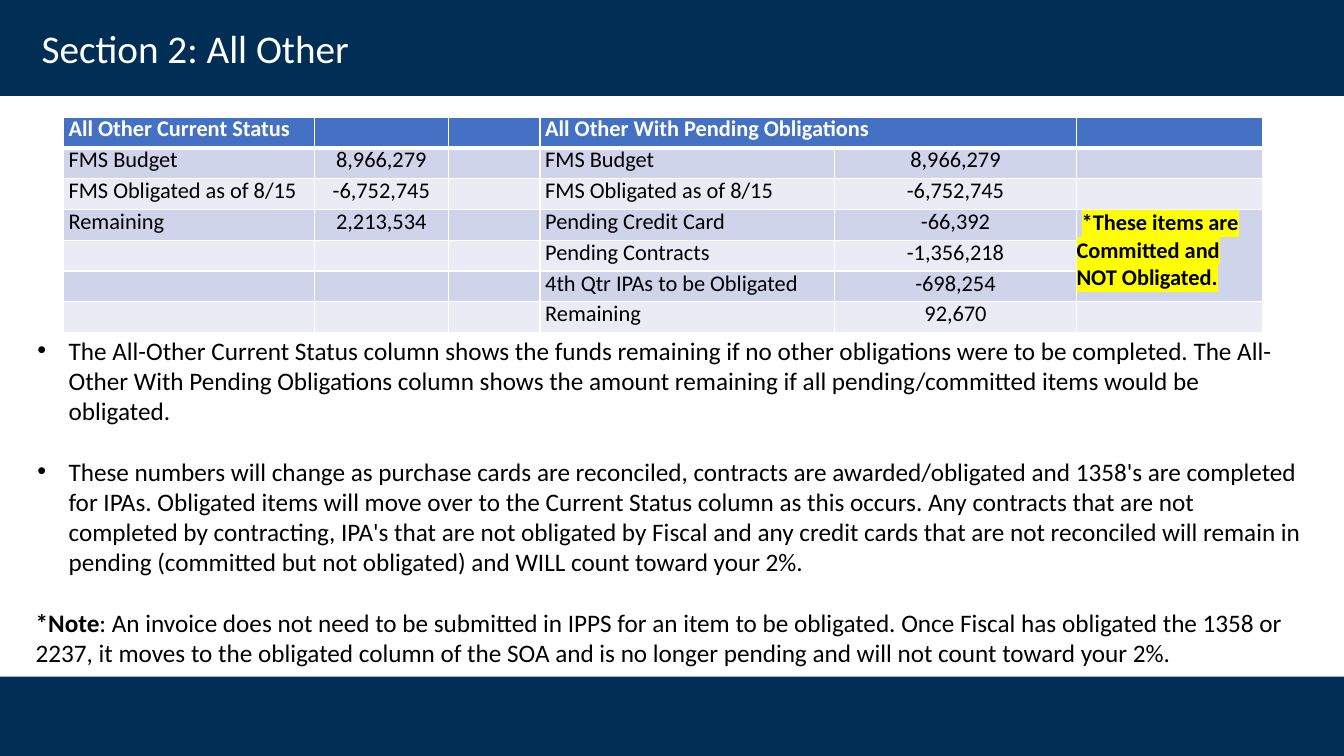
"""Build the "Section 2: All Other" budget status slide."""
from dataclasses import dataclass
from typing import Any

from lxml import etree
from pptx import Presentation
from pptx.dml.color import RGBColor
from pptx.enum.shapes import MSO_SHAPE
from pptx.enum.text import PP_ALIGN
from pptx.oxml.ns import qn
from pptx.util import Cm, Pt

RECTANGLE = MSO_SHAPE.RECTANGLE
LEFT, CENTER = PP_ALIGN.LEFT, PP_ALIGN.CENTER
NAVY = RGBColor(0x00, 0x2E, 0x55)
HEADER_BLUE = RGBColor(0x44, 0x71, 0xC4)
BAND_DARK = RGBColor(0xCF, 0xD4, 0xEA)
BAND_LIGHT = RGBColor(0xE9, 0xEB, 0xF5)
YELLOW = RGBColor(0xFF, 0xFF, 0x00)
WHITE = RGBColor(0xFF, 0xFF, 0xFF)
BLACK = RGBColor(0x00, 0x00, 0x00)

SLIDE_WIDTH, SLIDE_HEIGHT = 33.87, 19.05
COLUMN_WIDTHS = (6.32, 3.38, 2.31, 7.42, 6.1, 4.7)
ROW_HEIGHTS = (0.69, 0.71, 0.71, 0.71, 0.71, 0.71, 0.74)
NUMBER_COLUMNS = (1, 4)
NOTE_ROW, NOTE_COLUMN = 3, 5
STATUS_ROWS = (
    ("All Other Current Status", "", "", "All Other With Pending Obligations", "", ""),
    ("FMS Budget", "8,966,279", "", "FMS Budget", "8,966,279", ""),
    ("FMS Obligated as of 8/15", "-6,752,745", "", "FMS Obligated as of 8/15", "-6,752,745", ""),
    ("Remaining", "2,213,534", "", "Pending Credit Card", "-66,392",
     "*These items are Committed and NOT Obligated."),
    ("", "", "", "Pending Contracts", "-1,356,218", ""),
    ("", "", "", "4th Qtr IPAs to be Obligated", "-698,254", ""),
    ("", "", "", "Remaining", "92,670", ""),
)


@dataclass(frozen=True)
class Band:
    top: float
    height: float


@dataclass(frozen=True)
class Box:
    left: float
    top: float
    width: float
    height: float
    top_margin: float


@dataclass(frozen=True)
class Passage:
    text: str
    lead: str = ""
    bullet: bool = False
    space_before: float = 0


BANDS = (Band(0, 2.42), Band(17.05, 2))
TITLE_BOX = Box(0.41, 0.43, 32.3, 1.6, 0.19)
BODY_BOX = Box(0.9, 8.38, 32, 8.46, 0.06)
PASSAGES = (
    Passage("The All-Other Current Status column shows the funds remaining if no other "
            "obligations were to be completed. The All-Other With Pending Obligations column "
            "shows the amount remaining if all pending/committed items would be obligated.",
            bullet=True),
    Passage("These numbers will change as purchase cards are reconciled, contracts are "
            "awarded/obligated and 1358's are completed for IPAs. Obligated items will move over "
            "to the Current Status column as this occurs. Any contracts that are not completed by "
            "contracting, IPA's that are not obligated by Fiscal and any credit cards that are not "
            "reconciled will remain in pending (committed but not obligated) and WILL count toward "
            "your 2%.", bullet=True, space_before=21.6),
    Passage(": An invoice does not need to be submitted in IPPS for an item to be obligated. Once "
            "Fiscal has obligated the 1358 or 2237, it moves to the obligated column of the SOA "
            "and is no longer pending and will not count toward your 2%.",
            lead="*Note", space_before=21.6),
)


def apply_formats(target: Any, formats: dict[str, Any]) -> None:
    for name, value in formats.items():
        setattr(target, name, value)


def add_run(paragraph: Any, text: str, size: float, color: RGBColor, bold: bool = False) -> Any:
    run = paragraph.add_run()
    run.text = text
    apply_formats(run.font, {"name": "Calibri", "size": Pt(size), "bold": bold})
    run.font.color.rgb = color
    return run


def set_indent(paragraph: Any, margin: float, first_line: float = 0) -> Any:
    properties = paragraph._p.get_or_add_pPr()
    properties.set("marL", str(Cm(margin)))
    properties.set("indent", str(Cm(first_line)))
    return properties


def highlight(run: Any, color: RGBColor) -> None:
    mark = etree.Element(qn("a:highlight"))
    etree.SubElement(mark, qn("a:srgbClr"), val=str(color))
    run.font._element.find(qn("a:solidFill")).addnext(mark)


def add_band(slide: Any, band: Band) -> None:
    shape = slide.shapes.add_shape(
        RECTANGLE, Cm(0), Cm(band.top), Cm(SLIDE_WIDTH), Cm(band.height))
    shape.shadow.inherit = False
    shape.fill.solid()
    shape.fill.fore_color.rgb = NAVY
    shape.line.fill.background()


def add_text_frame(slide: Any, box: Box) -> Any:
    shape = slide.shapes.add_textbox(Cm(box.left), Cm(box.top), Cm(box.width), Cm(box.height))
    apply_formats(shape.text_frame, {
        "word_wrap": True, "margin_left": 0, "margin_right": 0,
        "margin_top": Cm(box.top_margin), "margin_bottom": 0})
    return shape.text_frame


def set_borders(cell: Any, row: int) -> None:
    widths = {"a:lnL": 1, "a:lnR": 1, "a:lnT": 3 if row == 1 else 1, "a:lnB": 3 if row == 0 else 1}
    properties = cell._tc.get_or_add_tcPr()
    for position, (tag, width) in enumerate(widths.items()):
        border = etree.Element(qn(tag), w=str(Pt(width)))
        fill = etree.SubElement(border, qn("a:solidFill"))
        etree.SubElement(fill, qn("a:srgbClr"), val=str(WHITE))
        properties.insert(position, border)


def format_cell(cell: Any, row: int, column: int, text: str) -> None:
    header = row == 0
    note = (row, column) == (NOTE_ROW, NOTE_COLUMN)
    apply_formats(cell, {"margin_left": 0, "margin_right": 0, "margin_top": 0, "margin_bottom": 0})
    cell.fill.solid()
    cell.fill.fore_color.rgb = HEADER_BLUE if header else BAND_DARK if row % 2 else BAND_LIGHT
    set_borders(cell, row)
    paragraph = cell.text_frame.paragraphs[0]
    if note:
        set_indent(paragraph, 0, 0.13)
    else:
        number = column in NUMBER_COLUMNS
        set_indent(paragraph, 0 if number else 0.13)
        apply_formats(paragraph, {
            "alignment": CENTER if number else LEFT,
            "line_spacing": Pt(18.2 if header else 18.6)})
    if text:
        run = add_run(paragraph, text, 16, WHITE if header else BLACK, header or note)
        if note:
            highlight(run, YELLOW)


def add_status_table(slide: Any) -> None:
    table = slide.shapes.add_table(
        len(ROW_HEIGHTS), len(COLUMN_WIDTHS), Cm(1.6), Cm(2.95),
        Cm(sum(COLUMN_WIDTHS)), Cm(sum(ROW_HEIGHTS))).table
    apply_formats(table, {"first_row": False, "horz_banding": False})
    for column, width in zip(table.columns, COLUMN_WIDTHS):
        column.width = Cm(width)
    for row, height in zip(table.rows, ROW_HEIGHTS):
        row.height = Cm(height)
    for row, texts in enumerate(STATUS_ROWS):
        for column, text in enumerate(texts):
            format_cell(table.cell(row, column), row, column, text)
    table.cell(0, 3).merge(table.cell(0, 4))
    table.cell(NOTE_ROW, NOTE_COLUMN).merge(table.cell(NOTE_ROW + 2, NOTE_COLUMN))


def add_body(slide: Any) -> None:
    frame = add_text_frame(slide, BODY_BOX)
    for index, passage in enumerate(PASSAGES):
        paragraph = frame.add_paragraph() if index else frame.paragraphs[0]
        if passage.bullet:
            properties = set_indent(paragraph, 0.83, -0.79)
            etree.SubElement(properties, qn("a:buFont"), typeface="Arial")
            etree.SubElement(properties, qn("a:buChar"), char="•")
        if passage.space_before:
            paragraph.space_before = Pt(passage.space_before)
        if passage.lead:
            add_run(paragraph, passage.lead, 18, BLACK, True)
        add_run(paragraph, passage.text, 18, BLACK)


def main() -> None:
    presentation = Presentation()
    apply_formats(presentation, {"slide_width": Cm(SLIDE_WIDTH), "slide_height": Cm(SLIDE_HEIGHT)})
    slide = presentation.slides.add_slide(presentation.slide_layouts[6])
    for band in BANDS:
        add_band(slide, band)
    add_status_table(slide)
    title = add_text_frame(slide, TITLE_BOX).paragraphs[0]
    set_indent(title, 0.64)
    add_run(title, "Section 2: All Other", 28, WHITE)
    add_body(slide)
    presentation.save("out.pptx")


if __name__ == "__main__":
    main()
